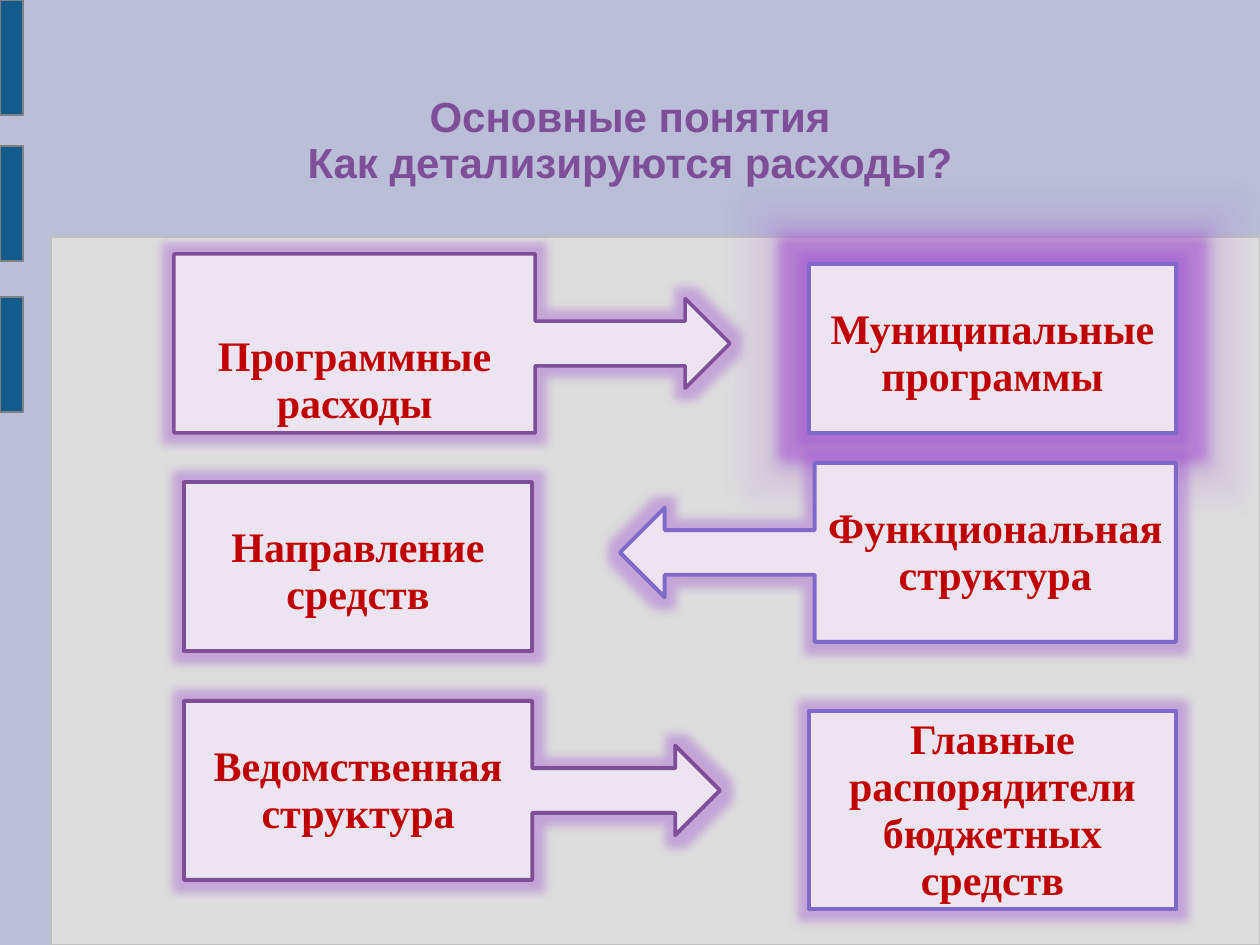
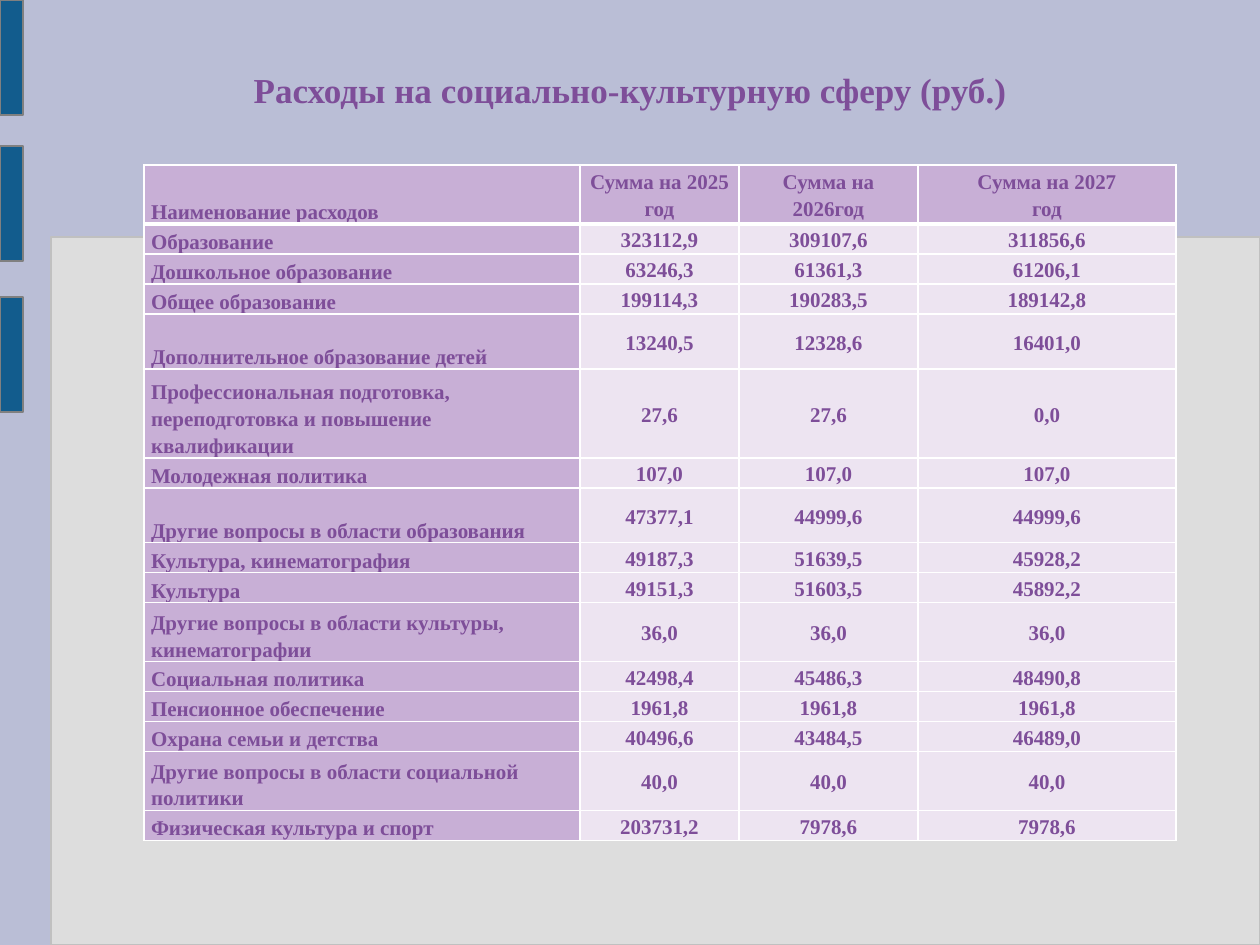
from lxml import etree
from pptx import Presentation
from pptx.dml.color import RGBColor
from pptx.enum.shapes import MSO_SHAPE
from pptx.enum.text import MSO_ANCHOR, MSO_AUTO_SIZE, PP_ALIGN
from pptx.oxml.ns import qn
from pptx.util import Pt

PX = 9525 * 96 / 126
RECT, ROUND = MSO_SHAPE.RECTANGLE, MSO_SHAPE.ROUNDED_RECTANGLE
PROCESS = MSO_SHAPE.FLOWCHART_PROCESS
TO_RIGHT, TO_LEFT = MSO_SHAPE.RIGHT_ARROW_CALLOUT, MSO_SHAPE.LEFT_ARROW_CALLOUT
TOP, MIDDLE, BOTTOM = MSO_ANCHOR.TOP, MSO_ANCHOR.MIDDLE, MSO_ANCHOR.BOTTOM
LEFT, CENTER = PP_ALIGN.LEFT, PP_ALIGN.CENTER

BACKDROP, PANEL, PANEL_LINE = "BABED6", "DDDDDD", "C0C0C0"
BAR, BAR_LINE = "125C8D", "808080"
PURPLE, VIOLET, LILAC, PALE = "7E4E99", "7E6BC9", "C8AFD6", "EDE4F1"
RED, WHITE, GLOW = "C00000", "FFFFFF", "9F4FCF"
SERIF, SANS = "Times New Roman", "Arial"

BAR_TOPS = (0, 146, 297)
TITLES = [
    dict(text="Основные понятия\vКак детализируются расходы?",
         height=145, bottom=0, size=24, font=SANS),
    dict(text="Расходы на социально-культурную сферу (руб.)",
         height=86, bottom=41, size=20, font=SERIF),
]
BLANK_LINE = 37
CONCEPTS = [
    ("Муниципальные программы", RECT, (809, 264, 367, 169), VIOLET, 2, 1),
    ("Программные расходы", TO_RIGHT, (174, 254, 556, 179), PURPLE, 2, 2),
    ("Функциональная структура", TO_LEFT, (620, 463, 556, 179), VIOLET, 2.25, 1),
    ("Направление средств", PROCESS, (184, 482, 348, 169), PURPLE, 2.25, 1),
    ("Ведомственная структура", TO_RIGHT, (184, 701, 536, 179), PURPLE, 2.25, 1),
    ("Главные распорядители бюджетных средств", PROCESS,
     (809, 711, 367, 198), VIOLET, 2.25, 0),
]
HALO_CONCEPT = "Муниципальные программы"

COLUMNS = (436, 159, 179, 258)
ONE, GAP, TWO, THREE = 30, 55, 59, 89
EXPENSES = [
    (TWO, "Наименование расходов", "Сумма на 2025 год", "Сумма на 2026год",
     "Сумма на 2027\nгод"),
    (ONE, "Образование", "323112,9", "309107,6", "311856,6"),
    (ONE, "Дошкольное образование", "63246,3", "61361,3", "61206,1"),
    (ONE, "Общее образование", "199114,3", "190283,5", "189142,8"),
    (GAP, "Дополнительное образование детей", "13240,5", "12328,6", "16401,0"),
    (THREE, "Профессиональная подготовка, переподготовка и повышение квалификации",
     "27,6", "27,6", "0,0"),
    (ONE, "Молодежная политика", "107,0", "107,0", "107,0"),
    (GAP, "Другие вопросы в области образования", "47377,1", "44999,6", "44999,6"),
    (ONE, "Культура, кинематография", "49187,3", "51639,5", "45928,2"),
    (ONE, "Культура", "49151,3", "51603,5", "45892,2"),
    (TWO, "Другие вопросы в области культуры, кинематографии",
     "36,0", "36,0", "36,0"),
    (ONE, "Социальная политика", "42498,4", "45486,3", "48490,8"),
    (ONE, "Пенсионное обеспечение", "1961,8", "1961,8", "1961,8"),
    (ONE, "Охрана семьи и детства", "40496,6", "43484,5", "46489,0"),
    (TWO, "Другие вопросы в области социальной политики", "40,0", "40,0", "40,0"),
    (ONE, "Физическая культура и спорт", "203731,2", "7978,6", "7978,6"),
]


def px(n):
    return round(n * PX)


def rgb(value):
    return RGBColor.from_string(value)


def assign(obj, values):
    for name, value in values.items():
        setattr(obj, name, value)


def margins(left, top, right, bottom):
    names = ("margin_left", "margin_top", "margin_right", "margin_bottom")
    return dict(zip(names, map(px, (left, top, right, bottom))))


def write(tf, text, size, color, align=CENTER, spacing=0.93, font=SERIF):
    tf.text = text
    for p in tf.paragraphs:
        assign(p, dict(alignment=align, line_spacing=spacing))
        for r in p.runs:
            assign(r.font, dict(name=font, size=Pt(size), bold=True))
            r.font.color.rgb = rgb(color)


def add_box(s, kind, box, fill, line, width):
    sp = s.shapes.add_shape(kind, *map(px, box))
    sp.shadow.inherit = False
    sp.fill.solid()
    sp.fill.fore_color.rgb = rgb(fill)
    sp.line.color.rgb = rgb(line)
    sp.line.width = Pt(width)
    return sp


def add_effect(sp, tag, **attributes):
    effects = sp.element.spPr.find(qn("a:effectLst"))
    effect = etree.SubElement(effects, qn(tag), attributes)
    color = etree.SubElement(effect, qn("a:srgbClr"), val=GLOW)
    etree.SubElement(color, qn("a:alpha"), val="40000")


def add_border(cell, side, width):
    ln = etree.SubElement(cell._tc.get_or_add_tcPr(), qn(f"a:ln{side}"), w=str(Pt(width)))
    fill = etree.SubElement(ln, qn("a:solidFill"))
    etree.SubElement(fill, qn("a:srgbClr"), val=WHITE)


def decorate_layout(layout, s):
    layout.background.fill.solid()
    layout.background.fill.fore_color.rgb = rgb(BACKDROP)
    blocks = [((51, 237, 1209, 708), PANEL, PANEL_LINE)]
    blocks += [((0, top, 23, 115), BAR, BAR_LINE) for top in BAR_TOPS]
    for box, fill, line in blocks:
        sp = add_box(s, ROUND, box, fill, line, 0.75)
        sp.adjustments[0] = 0
        layout.shapes.element.append(sp.element)


def set_title(s, text, height, bottom, size, font):
    sp = s.shapes.title
    assign(sp, dict(left=px(92), top=px(69), width=px(1076), height=px(height)))
    tf = sp.text_frame
    assign(tf, dict(auto_size=MSO_AUTO_SIZE.NONE, vertical_anchor=MIDDLE,
                    word_wrap=True, **margins(0, 0, 0, bottom)))
    write(tf, text, size, PURPLE, font=font)


def add_concepts(s):
    for text, kind, box, line, width, blanks in CONCEPTS:
        sp = add_box(s, kind, box, PALE, line, width)
        add_effect(sp, "a:glow", rad="139700")
        if text == HALO_CONCEPT:
            add_effect(sp, "a:outerShdw", blurRad="139700", dist="0", dir="0",
                       sx="118000", sy="140000", algn="ctr", rotWithShape="0")
        tf = sp.text_frame
        assign(tf, dict(word_wrap=True, vertical_anchor=TOP,
                        **margins(12, 6 + BLANK_LINE * blanks, 12, 6)))
        write(tf, text, 24, RED)


def add_expenses(s):
    heights = [row[0] for row in EXPENSES]
    frame = s.shapes.add_table(len(EXPENSES), len(COLUMNS), px(144), px(165),
                               px(sum(COLUMNS)), px(sum(heights)))
    table = frame.table
    table.horz_banding = False
    for column, width in zip(table.columns, COLUMNS):
        column.width = px(width)
    for i, (height, *texts) in enumerate(EXPENSES):
        table.rows[i].height = px(height)
        for j, text in enumerate(texts):
            cell = table.cell(i, j)
            for side in "LRTB":
                header_edge = (i, side) in ((0, "B"), (1, "T"))
                add_border(cell, side, 3 if header_edge else 1)
            cell.fill.solid()
            cell.fill.fore_color.rgb = rgb(PALE if i and j else LILAC)
            assign(cell, dict(vertical_anchor=MIDDLE if j else BOTTOM,
                              **margins(7, 0, 7, 0)))
            write(cell.text_frame, text, 12, PURPLE, CENTER if j else LEFT, 1.15)


def main():
    prs = Presentation()
    assign(prs, dict(slide_width=px(1260), slide_height=px(945)))
    layout = prs.slide_layouts[5]
    slides = [prs.slides.add_slide(layout) for _ in TITLES]
    decorate_layout(layout, slides[0])
    for s, title in zip(slides, TITLES):
        set_title(s, **title)
    add_concepts(slides[0])
    add_expenses(slides[1])
    prs.save("out.pptx")


if __name__ == "__main__":
    main()
